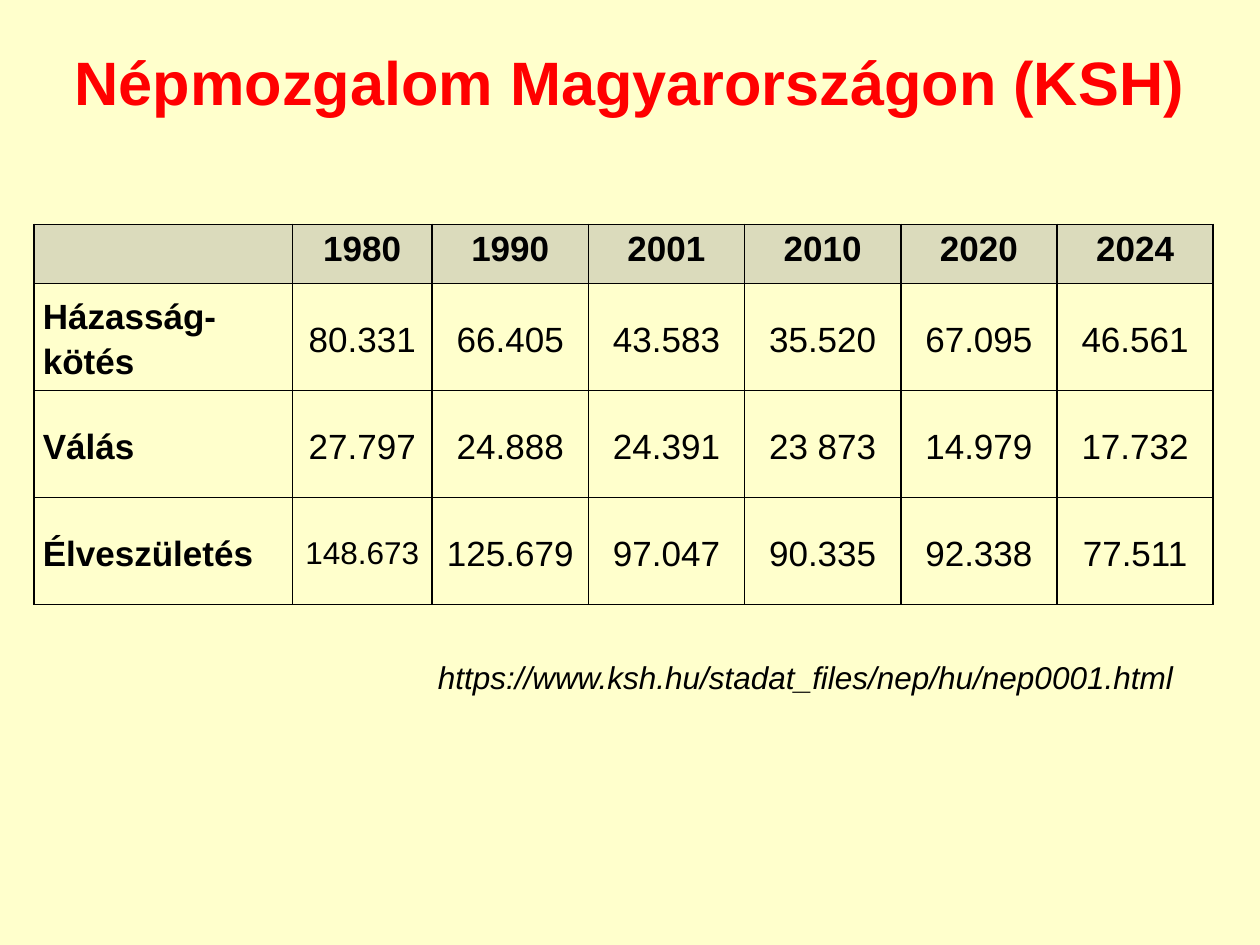
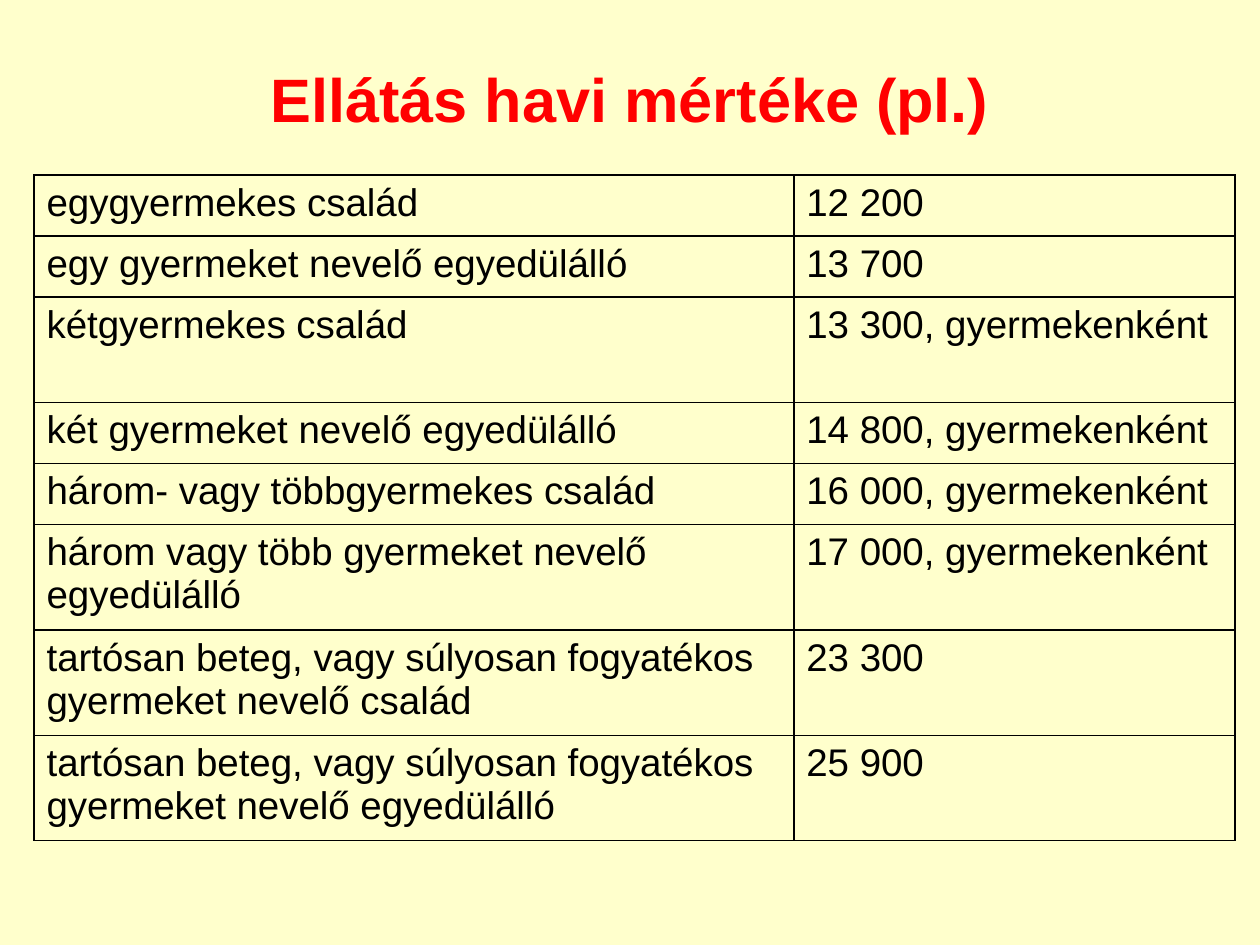
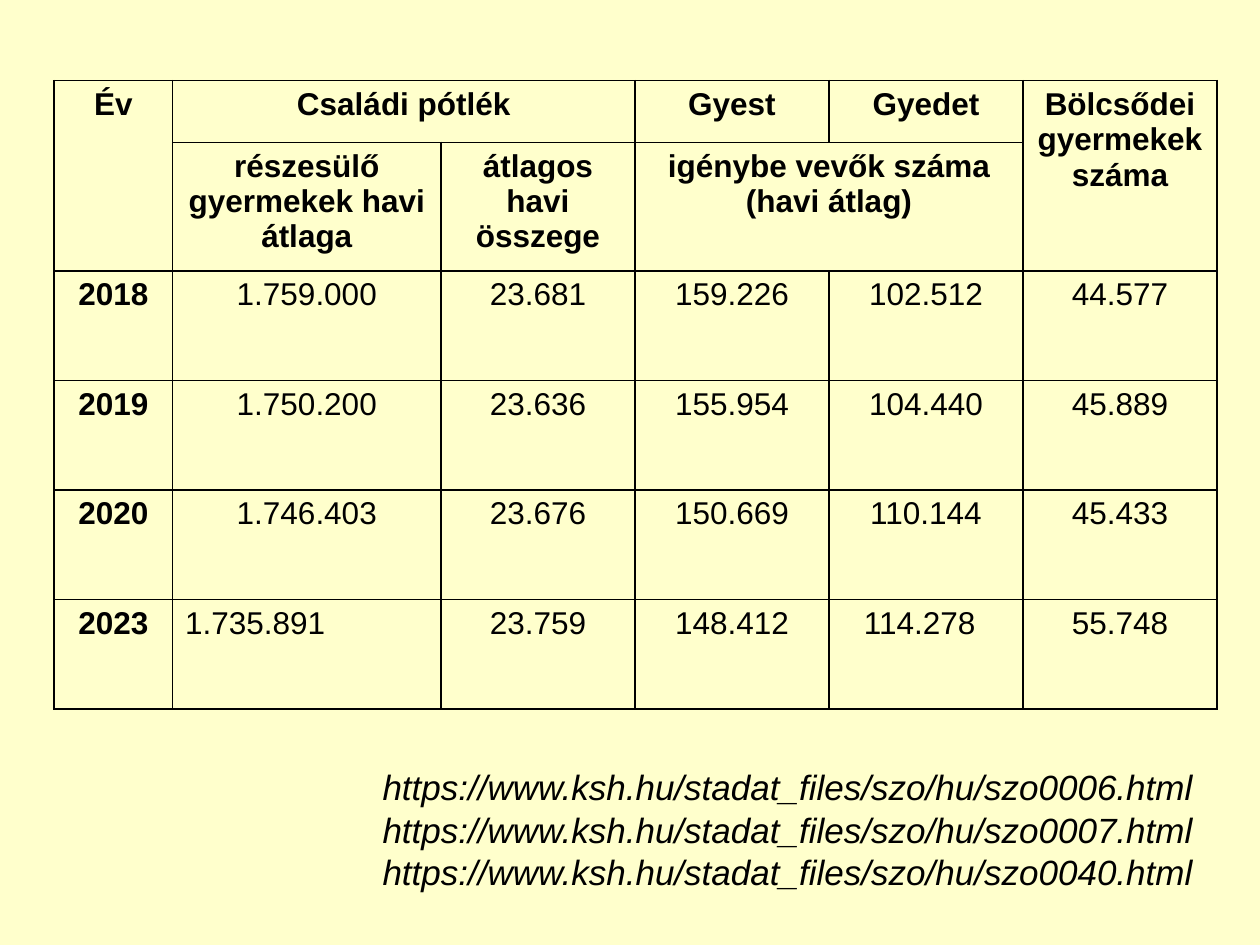
from dataclasses import dataclass, field

from lxml import etree
from pptx import Presentation
from pptx import util as u
from pptx.dml.color import RGBColor
from pptx.enum import text
from pptx.oxml import ns

COLS, ROWS = 100, 75
LEFT, MID, RIGHT = text.PP_ALIGN.LEFT, text.PP_ALIGN.CENTER, text.PP_ALIGN.RIGHT


@dataclass(frozen=True)
class Theme:
    font: str = "Arial"
    paper: str = "FFFFCC"
    ink: str = "000000"
    red: str = "FF0000"
    gray: str = "A6A6A6"
    veil: int = 40
    rule: float = 1
    title: int = 35
    large: int = 22
    body: int = 20
    small: int = 18


@dataclass(frozen=True)
class Box:
    x: float
    y: float
    w: float
    h: float


@dataclass(frozen=True)
class Style:
    size: int
    color: str
    bold: bool = False
    italic: bool = False
    align: text.PP_ALIGN = LEFT
    space: float | None = None


@dataclass(frozen=True)
class Grid:
    x: float
    y: float
    cols: list[float]
    rows: list[float]
    cells: list[list[str]]
    size: int
    head: int = 0
    stub: bool = False
    shade: bool = False
    center: bool = False
    middle: bool = False
    space: float | None = None
    pad: tuple[float, float] = (1, 0.5)
    spans: list[tuple[int, int, int, int]] = field(default_factory=list)


THEME = Theme()
TITLE = Style(THEME.title, THEME.red, bold=True, align=MID)

deck = Presentation()
deck.slide_width, deck.slide_height = u.Inches(10), u.Inches(7.5)


def across(n: float) -> int:
    return round(deck.slide_width * n / COLS)


def down(n: float) -> int:
    return round(deck.slide_height * n / ROWS)


def paint(fill, color: str) -> None:
    fill.solid()
    fill.fore_color.rgb = RGBColor.from_string(color)


def write(frame, words: str, style: Style) -> None:
    frame.text = words
    for par in frame.paragraphs:
        par.alignment = style.align
        if style.space:
            par.line_spacing = style.space
        for run in par.runs:
            font = run.font
            font.name, font.size = THEME.font, u.Pt(style.size)
            font.bold, font.italic = style.bold, style.italic
            font.color.rgb = RGBColor.from_string(style.color)


def label(slide, box: Box, words: str, style: Style) -> None:
    shape = slide.shapes.add_textbox(across(box.x), down(box.y), across(box.w), down(box.h))
    frame = shape.text_frame
    frame.word_wrap = True
    frame.auto_size = text.MSO_AUTO_SIZE.SHAPE_TO_FIT_TEXT
    write(frame, words, style)


def source(slide, box: Box, words: str, size: int) -> None:
    label(slide, box, words, Style(size, THEME.ink, italic=True, align=RIGHT))


def frame_cell(cell) -> None:
    props = cell._tc.get_or_add_tcPr()
    for spot, side in enumerate(("lnL", "lnR", "lnT", "lnB")):
        line = etree.Element(ns.qn(f"a:{side}"), w=str(u.Pt(THEME.rule)))
        fill = etree.SubElement(line, ns.qn("a:solidFill"))
        etree.SubElement(fill, ns.qn("a:srgbClr"), val=THEME.ink)
        props.insert(spot, line)


def tint(cell) -> None:
    paint(cell.fill, THEME.gray)
    tone = cell._tc.tcPr.find(".//" + ns.qn("a:srgbClr"))
    etree.SubElement(tone, ns.qn("a:alpha"), val=str(THEME.veil * 1000))


def draw(slide, grid: Grid):
    shape = slide.shapes.add_table(
        len(grid.rows), len(grid.cols), across(grid.x), down(grid.y),
        across(sum(grid.cols)), down(sum(grid.rows)))
    table = shape.table
    table.first_row = table.horz_banding = False
    for col, width in zip(table.columns, grid.cols):
        col.width = across(width)
    for row, height in zip(table.rows, grid.rows):
        row.height = down(height)
    for top, left, end, last in grid.spans:
        table.cell(top, left).merge(table.cell(end, last))
    for r, line in enumerate(grid.cells):
        for c, words in enumerate(line):
            cell = table.cell(r, c)
            head, stub = r < grid.head, grid.stub and c == 0
            cell.margin_left = cell.margin_right = across(grid.pad[0])
            cell.margin_top = cell.margin_bottom = down(grid.pad[1])
            if grid.middle and not head:
                cell.vertical_anchor = text.MSO_ANCHOR.MIDDLE
            if head and grid.shade:
                tint(cell)
            else:
                cell.fill.background()
            frame_cell(cell)
            if words:
                side = MID if grid.center and not (stub and grid.middle) else LEFT
                write(cell.text_frame, words, Style(
                    grid.size, THEME.ink, bold=head or stub, align=side, space=grid.space))
    return table


def page():
    return deck.slides.add_slide(deck.slide_layouts[6])


def trends() -> None:
    slide = page()
    table = draw(slide, Grid(
        2.7, 17.8, [20.5, 11.1] + [12.4] * 5, [4.7] + [8.5] * 3,
        [["", "1980", "1990", "2001", "2010", "2020", "2024"],
         ["Házasság-kötés", "80.331", "66.405", "43.583", "35.520", "67.095", "46.561"],
         ["Válás", "27.797", "24.888", "24.391", "23 873", "14.979", "17.732"],
         ["Élveszületés", "148.673", "125.679", "97.047", "90.335", "92.338", "77.511"]],
        THEME.body, head=1, stub=True, shade=True, center=True, middle=True,
        space=1.15, pad=(0.7, 0)))
    table.cell(3, 1).text_frame.paragraphs[0].runs[0].font.size = u.Pt(THEME.small)
    label(slide, Box(0, 3, COLS, 6.9), "Népmozgalom Magyarországon (KSH)", TITLE)
    source(slide, Box(28, 51.7, 66.1, 4),
           "https://www.ksh.hu/stadat_files/nep/hu/nep0001.html", THEME.small)


def rates() -> None:
    slide = page()
    label(slide, Box(0, 4.4, COLS, 6.9), "Ellátás havi mértéke (pl.)", TITLE)
    low, high = 4.84, 8.37
    draw(slide, Grid(
        2.7, 13.9, [60.3, 35], [low, low, high, low, low, high, high, high],
        [["egygyermekes család", "12 200"],
         ["egy gyermeket nevelő egyedülálló", "13 700"],
         ["kétgyermekes család", "13 300, gyermekenként"],
         ["két gyermeket nevelő egyedülálló", "14 800, gyermekenként"],
         ["három- vagy többgyermekes család", "16 000, gyermekenként"],
         ["három vagy több gyermeket nevelő egyedülálló", "17 000, gyermekenként"],
         ["tartósan beteg, vagy súlyosan fogyatékos gyermeket nevelő család", "23 300"],
         ["tartósan beteg, vagy súlyosan fogyatékos gyermeket nevelő egyedülálló", "25 900"]],
        THEME.large))


def users() -> None:
    slide = page()
    table = draw(slide, Grid(
        4.3, 6.4, [9.4, 21.3] + [15.4] * 4, [4.9, 10.2] + [8.7] * 4,
        [["Év", "Családi pótlék", "", "Gyest", "Gyedet", "Bölcsődei gyermekek száma"],
         ["", "részesülő gyermekek havi átlaga", "átlagos havi összege",
          "igénybe vevők száma\n(havi átlag)", "", ""],
         ["2018", "1.759.000", "23.681", "159.226", "102.512", "44.577"],
         ["2019", "1.750.200", "23.636", "155.954", "104.440", "45.889"],
         ["2020", "1.746.403", "23.676", "150.669", "110.144", "45.433"],
         ["2023", "1.735.891", "23.759", "148.412", "114.278", "55.748"]],
        THEME.small, head=2, stub=True, center=True,
        spans=[(0, 0, 1, 0), (0, 1, 0, 2), (0, 5, 1, 5), (1, 3, 1, 4)]))
    table.cell(5, 1).text_frame.paragraphs[0].alignment = LEFT
    table.cell(5, 4).margin_right = across(2)
    links = [f"https://www.ksh.hu/stadat_files/szo/hu/szo{n}.html"
             for n in ("0006", "0007", "0040")]
    source(slide, Box(4.3, 60.3, 91.4, 11.1), "\n".join(links), THEME.body)


def main() -> None:
    paint(deck.slide_master.background.fill, THEME.paper)
    for build in (trends, rates, users):
        build()
    deck.save("out.pptx")


if __name__ == "__main__":
    main()
